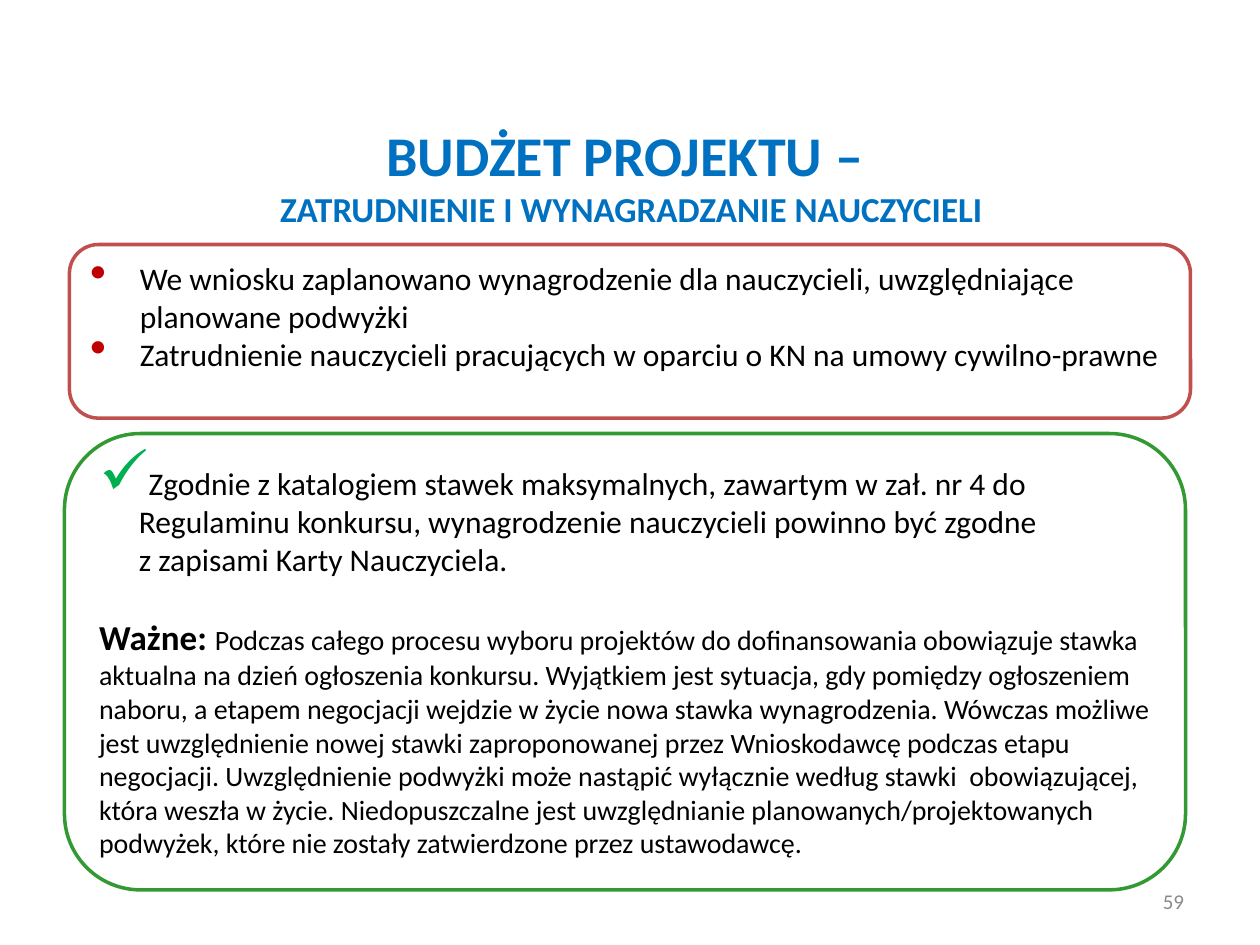
import pptx
import pptx.util
import pptx.dml.color
import pptx.enum.shapes
import pptx.enum.text
import lxml.etree

Cm, Pt = pptx.util.Cm, pptx.util.Pt
Align = pptx.enum.text.PP_ALIGN
Anchor = pptx.enum.text.MSO_ANCHOR
HUES = {"title": "0070C0", "red": "C0504D", "green": "339933", "dot": "C00000",
        "tick": "00B050", "text": "000000", "page": "898989"}


def style(par, size, hue, align=Align.LEFT):
    par.alignment = align
    par.font.name = "Calibri"
    par.font.size = Pt(size)
    par.font.color.rgb = pptx.dml.color.RGBColor.from_string(HUES[hue])


def bullet(par, char, hue, scale, indent):
    """Hang the paragraph on a coloured bullet; scale is in percent."""
    props = par._p.get_or_add_pPr()
    props.set("marL", str(Cm(indent)))
    props.set("indent", str(-Cm(indent)))
    ns = "{http://schemas.openxmlformats.org/drawingml/2006/main}"
    color = lxml.etree.SubElement(props, ns + "buClr")
    lxml.etree.SubElement(color, ns + "srgbClr", val=HUES[hue])
    lxml.etree.SubElement(props, ns + "buSzPct", val=str(scale * 1000))
    lxml.etree.SubElement(props, ns + "buChar", char=char)


deck = pptx.Presentation()
deck.slide_width, deck.slide_height = Cm(25.4), Cm(19.05)
slide = deck.slides.add_slide(deck.slide_layouts[6])

# Title and page number
labels = []
for left, top, width, height in [(1.3, 2.92, 22.86, 1.22), (18.2, 17.65, 5.92, 1.02)]:
    frame = slide.shapes.add_textbox(Cm(left), Cm(top), Cm(width), Cm(height)).text_frame
    frame.word_wrap = True
    frame.vertical_anchor = Anchor.MIDDLE
    labels.append(frame.paragraphs[0])
title, page = labels

style(title, 32, "title", Align.CENTER)
title.font.bold = True
title.add_run().text = "BUDŻET PROJEKTU – "
title.add_line_break()
sub = title.add_run()
sub.text = "ZATRUDNIENIE I WYNAGRADZANIE NAUCZYCIELI"
sub.font.size = Pt(20)

page.text = "59"
style(page, 12, "page", Align.RIGHT)

# Framed panels
panels = []
for left, top, height, hue, anchor in [(1.4, 4.93, 3.5, "red", Anchor.TOP),
                                       (1.3, 8.74, 9.2, "green", Anchor.MIDDLE)]:
    box = slide.shapes.add_shape(pptx.enum.shapes.MSO_SHAPE.ROUNDED_RECTANGLE,
                                 Cm(left), Cm(top), Cm(22.6), Cm(height))
    box.shadow.inherit = False
    box.fill.background()
    box.line.color.rgb = pptx.dml.color.RGBColor.from_string(HUES[hue])
    box.line.width = Pt(2)
    box.text_frame.word_wrap = True
    box.text_frame.vertical_anchor = anchor
    panels.append(box.text_frame)
faults, rules = panels

errors = [
    "We wniosku zaplanowano wynagrodzenie dla nauczycieli, uwzględniające planowane podwyżki",
    "Zatrudnienie nauczycieli pracujących w oparciu o KN na umowy cywilno-prawne",
]
for num, text in enumerate(errors):
    par = faults.add_paragraph() if num else faults.paragraphs[0]
    par.text = text
    bullet(par, "•", "dot", 150, 1.0)
    style(par, 18, "text")

rule = rules.paragraphs[0]
rule.text = ("Zgodnie z katalogiem stawek maksymalnych, zawartym w zał. nr 4 do Regulaminu "
             "konkursu, wynagrodzenie nauczycieli powinno być zgodne \v"
             "z zapisami Karty Nauczyciela.")
bullet(rule, "✓", "tick", 200, 0.8)
style(rule, 18, "text")

note = rules.add_paragraph()
note.space_before = Pt(22)
style(note, 16, "text")
lead = note.add_run()
lead.text = "Ważne: "
lead.font.size = Pt(20)
lead.font.bold = True
note.add_run().text = (
    "Podczas całego procesu wyboru projektów do dofinansowania obowiązuje stawka aktualna "
    "na dzień ogłoszenia konkursu. Wyjątkiem jest sytuacja, gdy pomiędzy ogłoszeniem naboru, "
    "a etapem negocjacji wejdzie w życie nowa stawka wynagrodzenia. Wówczas możliwe jest "
    "uwzględnienie nowej stawki zaproponowanej przez Wnioskodawcę podczas etapu negocjacji. "
    "Uwzględnienie podwyżki może nastąpić wyłącznie według stawki  obowiązującej, która weszła "
    "w życie. Niedopuszczalne jest uwzględnianie planowanych/projektowanych podwyżek, które "
    "nie zostały zatwierdzone przez ustawodawcę.")

deck.save("out.pptx")
